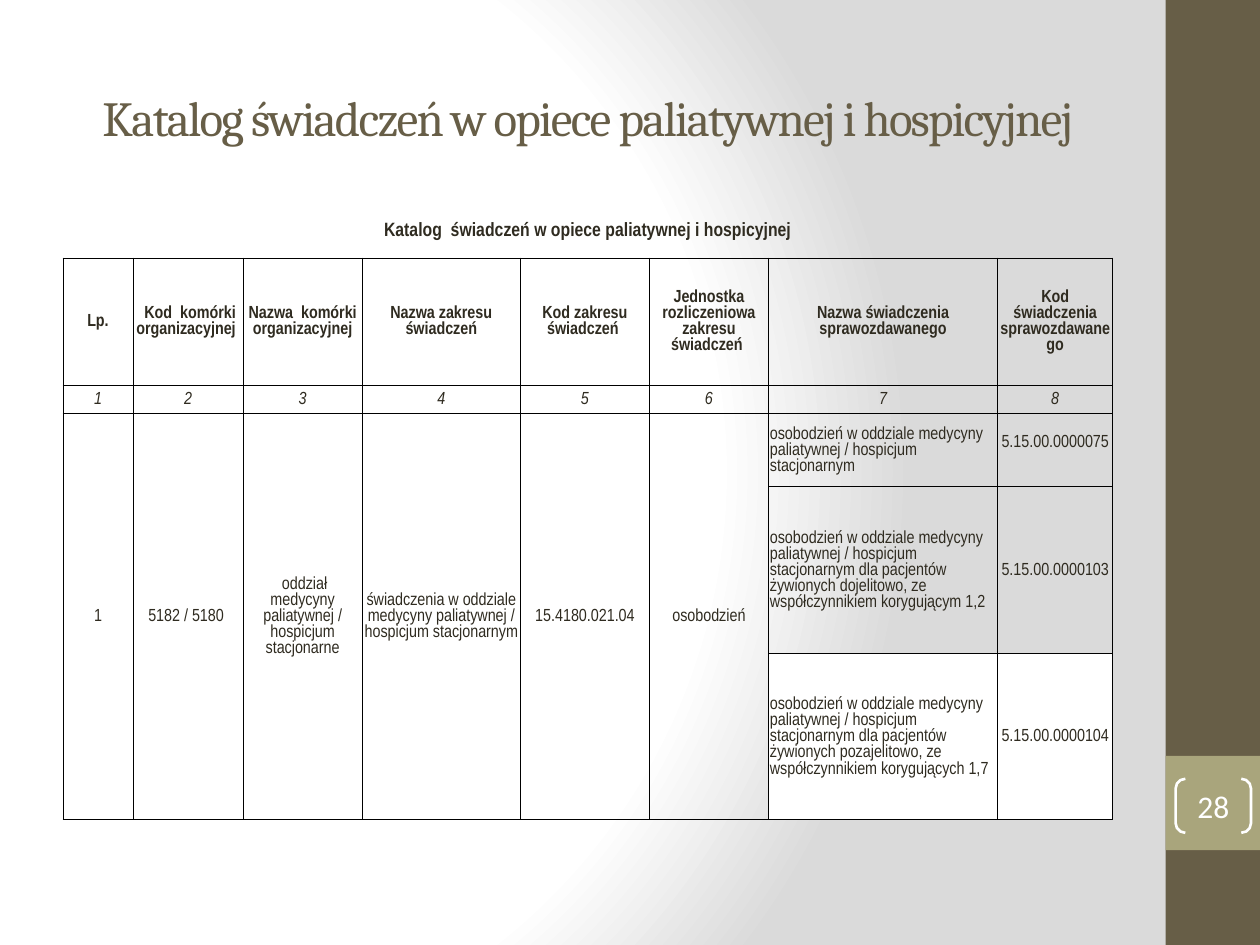
from dataclasses import dataclass
from typing import Optional

from lxml import etree
from pptx import Presentation
from pptx import util as u
from pptx.dml import color
from pptx.enum import shapes, text
from pptx.oxml import ns, parse_xml

Cm, Pt = u.Cm, u.Pt
MID, LEFT = text.PP_ALIGN.CENTER, text.PP_ALIGN.LEFT


@dataclass(frozen=True)
class Theme:
    brown: str = "675E47"
    olive: str = "A9A57C"
    ink: str = "2F2B20"
    white: str = "FFFFFF"
    grey: str = "DADADA"
    black: str = "000000"
    serif: str = "Cambria"
    sans: str = "Calibri"
    narrow: str = "Arial Narrow"
    title: float = 28
    page: float = 18
    head: float = 11
    body: float = 10
    rule: float = 0.5


T = Theme()


@dataclass(frozen=True)
class Font:
    name: str
    size: float
    hue: str
    bold: bool = False
    slant: bool = False


@dataclass(frozen=True)
class Box:
    x: float
    y: float
    w: float
    h: float

    def place(self) -> tuple:
        return Cm(self.x), Cm(self.y), Cm(self.w), Cm(self.h)


@dataclass(frozen=True)
class Item:
    row: int
    col: int
    words: str
    font: Font
    rows: int = 1
    cols: int = 1
    align: int = MID
    fill: Optional[str] = None
    foot: float = 0


HEAD = Font(T.narrow, T.head, T.ink, bold=True)
NAMES = Font(T.narrow, T.body, T.ink, bold=True)
COUNT = Font(T.narrow, T.body, T.ink, slant=True)
BODY = Font(T.narrow, T.body, T.ink)

WIDTHS = [1.41, 2.22, 2.4, 3.19, 2.6, 2.4, 4.62, 2.32]
HEIGHTS = [1.09, 2.56, 0.58, 1.47, 3.37, 3.33]
TITLE = "Katalog świadczeń w opiece paliatywnej i hospicyjnej"
LABELS = [
    "Lp.",
    " Kod  komórki organizacyjnej ",
    "Nazwa  komórki organizacyjnej",
    "Nazwa zakresu świadczeń",
    "Kod zakresu świadczeń ",
    "Jednostka rozliczeniowa zakresu świadczeń ",
    "Nazwa świadczenia sprawozdawanego",
    "Kod świadczenia sprawozdawanego",
]
# Text and fill of the cells that span all services
UNIT = [
    ("1", None),
    ("5182 / 5180 ", None),
    (" oddział medycyny paliatywnej / hospicjum stacjonarne", T.white),
    ("świadczenia w oddziale medycyny paliatywnej / hospicjum stacjonarnym", T.white),
    ("15.4180.021.04", None),
    ("osobodzień", None),
]
STAY = "osobodzień w oddziale medycyny paliatywnej / hospicjum stacjonarnym"
# Name, code, fill and bottom inset of the code
CARE = [
    (STAY, "5.15.00.0000075", None, 0.33),
    (STAY + " dla pacjentów żywionych dojelitowo, ze współczynnikiem korygującym 1,2",
     "5.15.00.0000103", None, 0),
    (STAY + " dla pacjentów żywionych pozajelitowo, ze współczynnikiem korygujących 1,7",
     "5.15.00.0000104", T.white, 0),
]


def rgb(hue: str) -> color.RGBColor:
    return color.RGBColor.from_string(hue)


def write(frame, words: str, font: Font, align: int = MID) -> None:
    frame.word_wrap = True
    para = frame.paragraphs[0]
    para.text = words
    para.alignment = align
    face = para.font
    face.name, face.size = font.name, Pt(font.size)
    face.bold, face.italic = font.bold, font.slant
    face.color.rgb = rgb(font.hue)


def shade(slide) -> None:
    """Give the slide a round gradient from white to grey."""
    slide.background.fill.solid()
    old = slide.background._cSld.find(".//" + ns.qn("a:solidFill"))
    stops = "".join(
        f'<a:gs pos="{at * 1000}"><a:srgbClr val="{hue}"/></a:gs>'
        for at, hue in [(0, T.white), (75, T.white), (100, T.grey)])
    grad = parse_xml(
        f'<a:gradFill {ns.nsdecls("a")} rotWithShape="1"><a:gsLst>{stops}</a:gsLst>'
        '<a:path path="circle"><a:fillToRect l="20000" t="50000" r="100000" b="50000"/>'
        '</a:path></a:gradFill>')
    old.getparent().replace(old, grad)


def band(slide, box: Box, hue: str) -> None:
    rect = slide.shapes.add_shape(shapes.MSO_SHAPE.RECTANGLE, *box.place())
    rect.shadow.inherit = False
    rect.fill.solid()
    rect.fill.fore_color.rgb = rgb(hue)
    rect.line.fill.background()


def headline(slide, box: Box) -> None:
    frame = slide.shapes.add_textbox(*box.place()).text_frame
    frame.vertical_anchor = text.MSO_ANCHOR.MIDDLE
    write(frame, TITLE, Font(T.serif, T.title, T.brown))
    frame.paragraphs[0].runs[0].font._element.set("spc", "-100")


def number(slide, box: Box, words: str) -> None:
    pair = slide.shapes.add_shape(shapes.MSO_SHAPE.DOUBLE_BRACKET, *box.place())
    pair.shadow.inherit = False
    pair.adjustments[0] = 0.18
    pair.fill.background()
    pair.line.color.rgb = rgb(T.white)
    pair.line.width = Pt(1.5)
    frame = pair.text_frame
    frame.margin_left = frame.margin_right = 0
    frame.margin_top = frame.margin_bottom = 0
    frame.vertical_anchor = text.MSO_ANCHOR.MIDDLE
    write(frame, words, Font(T.sans, T.page, T.white))


def edge(cell, sides: str) -> None:
    """Rule the named sides of a cell and clear the others."""
    props = cell._tc.get_or_add_tcPr()
    for side in "LRTB":
        line = etree.SubElement(props, ns.qn("a:ln" + side), w=str(Pt(T.rule)))
        if side in sides:
            fill = etree.SubElement(line, ns.qn("a:solidFill"))
            etree.SubElement(fill, ns.qn("a:srgbClr"), val=T.black)
        else:
            etree.SubElement(line, ns.qn("a:noFill"))


def fill_in(grid, item: Item) -> None:
    cell = grid.cell(item.row, item.col)
    if item.rows * item.cols > 1:
        cell.merge(grid.cell(item.row + item.rows - 1, item.col + item.cols - 1))
    cell.margin_left = cell.margin_right = cell.margin_top = Cm(0.03)
    cell.margin_bottom = Cm(item.foot)
    cell.vertical_anchor = text.MSO_ANCHOR.MIDDLE
    write(cell.text_frame, item.words, item.font, item.align)
    if item.fill:
        cell.fill.solid()
        cell.fill.fore_color.rgb = rgb(item.fill)


def items() -> list[Item]:
    cells = [Item(0, 0, TITLE.replace(" ", "  ", 1), HEAD, cols=len(WIDTHS))]
    for col, name in enumerate(LABELS):
        cells += [Item(1, col, name, NAMES), Item(2, col, str(col + 1), COUNT)]
    for col, (words, fill) in enumerate(UNIT):
        cells.append(Item(3, col, words, BODY, rows=len(CARE), fill=fill))
    for row, (name, code, fill, foot) in enumerate(CARE, 3):
        cells += [Item(row, 6, name, BODY, align=LEFT, fill=fill),
                  Item(row, 7, code, BODY, fill=fill, foot=foot)]
    return cells


def catalogue(slide, x: float, y: float) -> None:
    box = Box(x, y, sum(WIDTHS), sum(HEIGHTS))
    grid = slide.shapes.add_table(len(HEIGHTS), len(WIDTHS), *box.place()).table
    grid.first_row = grid.horz_banding = False
    for col, wide in zip(grid.columns, WIDTHS):
        col.width = Cm(wide)
    for at, (row, high) in enumerate(zip(grid.rows, HEIGHTS)):
        row.height = Cm(high)
        for cell in row.cells:
            edge(cell, "LRTB" if at else "B")
            cell.fill.background()
    for item in items():
        fill_in(grid, item)


def main() -> None:
    deck = Presentation()
    deck.slide_width, deck.slide_height = Cm(25.4), Cm(19.05)
    slide = deck.slides.add_slide(deck.slide_layouts[6])
    shade(slide)
    band(slide, Box(23.5, 0, 1.9, 19.05), T.brown)
    band(slide, Box(23.5, 15.24, 1.9, 1.9), T.olive)
    headline(slide, Box(1.27, 0.76, 21.16, 3.18))
    number(slide, Box(23.7, 15.7, 1.52, 1.09), "28")
    catalogue(slide, 1.27, 4.11)
    deck.save("out.pptx")


if __name__ == "__main__":
    main()
